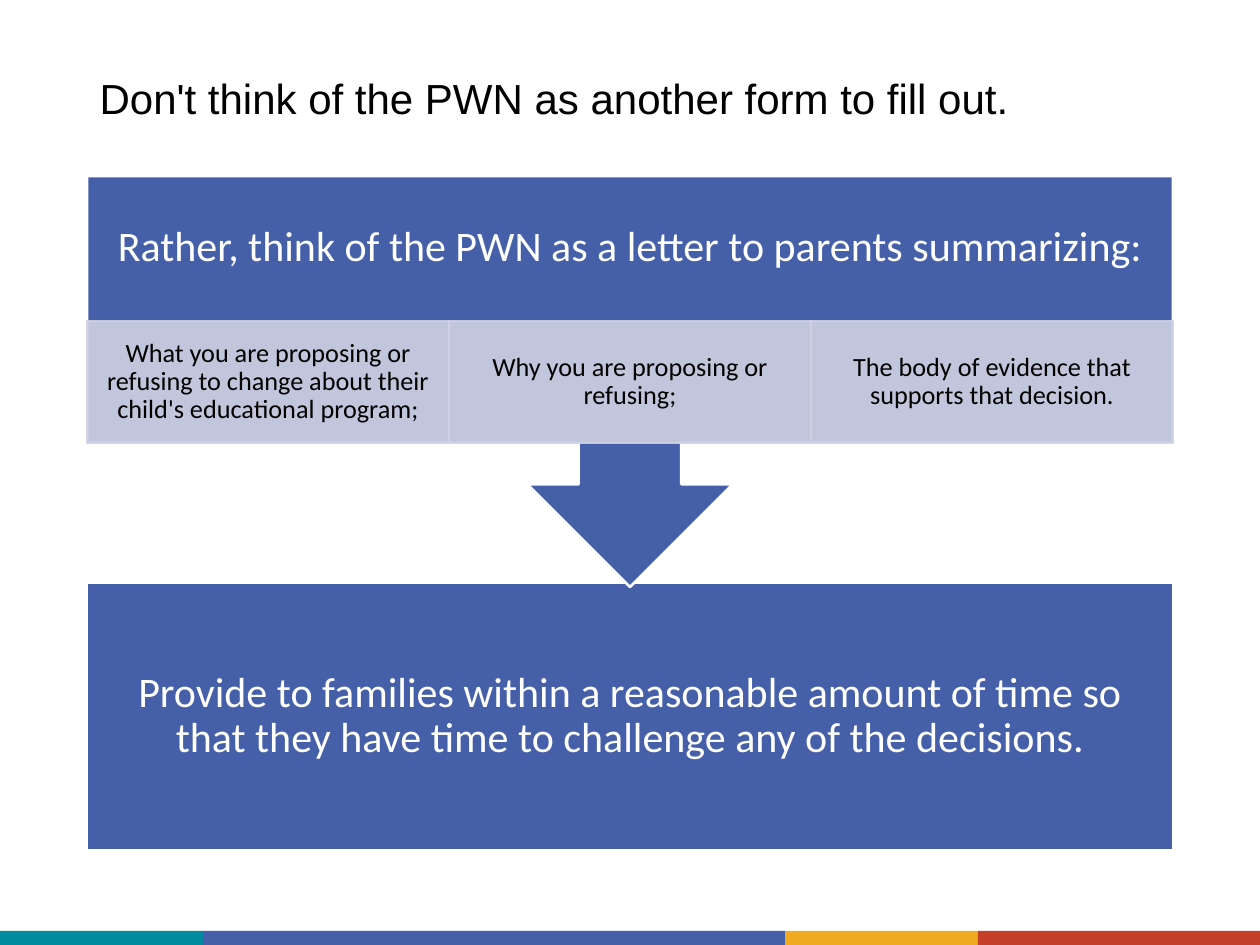
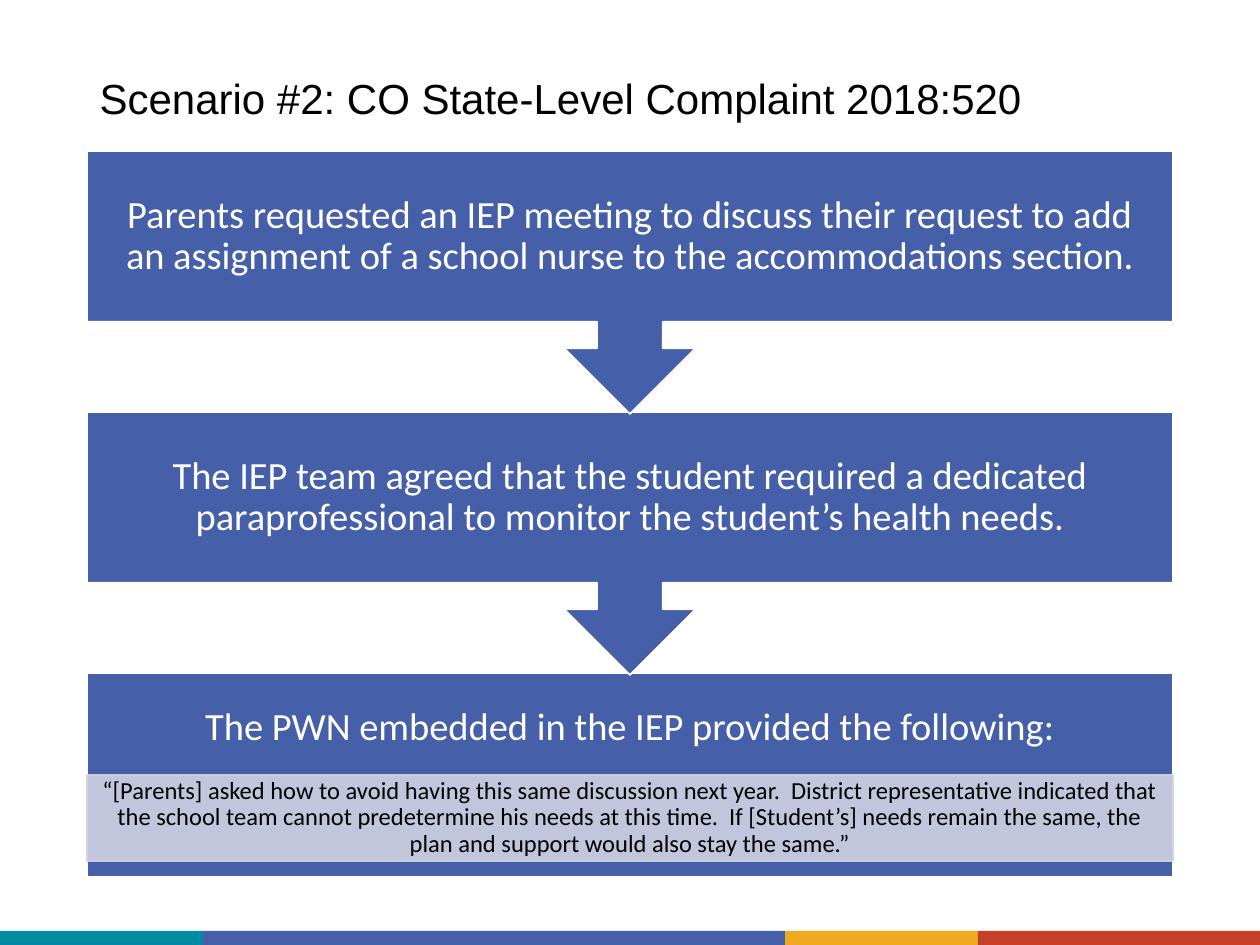
from lxml import etree
from pptx import Presentation
from pptx.dml.color import RGBColor
from pptx.enum.shapes import MSO_SHAPE
from pptx.enum.text import MSO_ANCHOR, MSO_AUTO_SIZE, PP_ALIGN
from pptx.oxml.ns import qn
from pptx.util import Emu, Pt

PX_PER_INCH = 126
PAGE_WIDTH, PAGE_HEIGHT = 1260, 945

BLACK = RGBColor(0x00, 0x00, 0x00)
WHITE = RGBColor(0xFF, 0xFF, 0xFF)
TEAL = RGBColor(0x00, 0x8C, 0xA0)
BLUE = RGBColor(0x45, 0x5F, 0xA9)
GOLD = RGBColor(0xEF, 0xAA, 0x1F)
RED = RGBColor(0xC6, 0x3F, 0x28)
LAVENDER = RGBColor(0xCF, 0xD2, 0xE2)

# Shared frame: content column and footer stripes
LEFT, WIDTH = 87, 1086
STRIPE_TOP, STRIPE_HEIGHT = 931, 14
STRIPES = [(TEAL, 203), (BLUE, 582), (GOLD, 193), (RED, 282)]


def px(length):
    return Emu(round(length * 914400 / PX_PER_INCH))


def set_all(target, values):
    for name, value in values.items():
        setattr(target, name, value)


def add_block(page, kind, left, top, width, height, fill):
    """Add a flat preset shape without outline or shadow."""
    block = page.shapes.add_shape(kind, px(left), px(top), px(width), px(height))
    block.shadow.inherit = False
    block.fill.solid()
    block.fill.fore_color.rgb = fill
    block.line.fill.background()
    return block


def set_outline(block, color, points):
    block.line.color.rgb = color
    block.line.width = Pt(points)


def make_translucent(block, percent):
    """Apply one opacity to the fill and the outline."""
    for color in block._element.spPr.iter(qn("a:srgbClr")):
        etree.SubElement(color, qn("a:alpha"), val=str(percent * 1000))


def write_text(box, text, font, align=PP_ALIGN.CENTER, **frame_format):
    frame = box.text_frame
    frame.text = text
    set_all(frame, {"word_wrap": True, "auto_size": MSO_AUTO_SIZE.NONE,
                    "vertical_anchor": MSO_ANCHOR.MIDDLE, **frame_format})
    para = frame.paragraphs[0]
    set_all(para, {"alignment": align, "line_spacing": 0.9})
    span_font = para.runs[0].font
    span_font.color.rgb = font.pop("color")
    set_all(span_font, font)


def margins(side, top, bottom):
    return {"margin_left": px(side), "margin_right": px(side),
            "margin_top": px(top), "margin_bottom": px(bottom)}


def add_step(page, kind, top, height, text, size, inset, outline, reserved=0):
    """Add a blue step; reserved is the depth kept free below its text."""
    step = add_block(page, kind, LEFT, top, WIDTH, height, BLUE)
    set_outline(step, WHITE, outline)
    write_text(step, text, {"name": "Calibri", "size": Pt(size), "color": WHITE},
               **margins(inset, inset, inset + reserved))


def add_details(page, top, height, texts, size):
    """Add a row of equal pale cells across the content column."""
    cell_width = WIDTH // len(texts)
    for column, text in enumerate(texts):
        cell = add_block(page, MSO_SHAPE.RECTANGLE, LEFT + column * cell_width,
                         top, cell_width, height, LAVENDER)
        set_outline(cell, LAVENDER, 1)
        make_translucent(cell, 90)
        write_text(cell, text, {"name": "Calibri", "size": Pt(size), "color": BLACK},
                   **margins(size, 2, 2))


def add_page(deck, title):
    """Add a page with its title and footer stripes."""
    page = deck.slides.add_slide(deck.slide_layouts[5])
    left = 0
    for color, width in STRIPES:
        add_block(page, MSO_SHAPE.RECTANGLE, left, STRIPE_TOP, width,
                  STRIPE_HEIGHT, color)
        left += width
    heading = page.shapes.title
    set_all(heading, {"left": px(LEFT), "top": px(50),
                      "width": px(WIDTH), "height": px(101)})
    write_text(heading, title, {"name": "Arial", "size": Pt(24), "color": BLACK},
               align=PP_ALIGN.LEFT)
    return page


def build_letter_page(deck):
    page = add_page(deck, "Don't think of the PWN as another form to fill out.")
    step_format = {"size": 24, "inset": 24, "outline": 1.5}
    # The lower step comes first so that the arrow tip lies over it
    add_step(page, MSO_SHAPE.RECTANGLE, 583, 267,
             "Provide to families within a reasonable amount of time so that "
             "they have time to challenge any of the decisions.", **step_format)
    add_step(page, MSO_SHAPE.DOWN_ARROW_CALLOUT, 176, 411,
             "Rather, think of the PWN as a letter to parents summarizing:",
             reserved=123, **step_format)
    add_details(page, 321, 122, [
        "What you are proposing or refusing to change about their child's "
        "educational program;",
        "Why you are proposing or refusing;",
        "The body of evidence that supports that decision."], 15)


def build_scenario_page(deck):
    page = add_page(deck, "Scenario #2: CO State-Level Complaint 2018:520")
    step_format = {"size": 22, "inset": 21, "outline": 1}
    first_top, pitch = 151, 261
    requests = [
        "Parents requested an IEP meeting to discuss their request to add an "
        "assignment of a school nurse to the accommodations section.",
        "The IEP team agreed that the student required a dedicated "
        "paraprofessional to monitor the student’s health needs."]
    # Outcome with the quoted notice
    add_step(page, MSO_SHAPE.RECTANGLE, first_top + 2 * pitch, 204,
             "The PWN embedded in the IEP provided the following:",
             reserved=93, **step_format)
    add_details(page, 775, 86, [
        "“[Parents] asked how to avoid having this same discussion next year.  "
        "District representative indicated that the school team cannot "
        "predetermine his needs at this time.  If [Student’s] needs remain the "
        "same, the plan and support would also stay the same.”"], 14)
    # Earlier steps, from the bottom up so that each tip lies over the next
    for row, text in reversed(list(enumerate(requests))):
        add_step(page, MSO_SHAPE.DOWN_ARROW_CALLOUT, first_top + row * pitch, 263,
                 text, **step_format)


def main():
    deck = Presentation()
    set_all(deck, {"slide_width": px(PAGE_WIDTH), "slide_height": px(PAGE_HEIGHT)})
    build_letter_page(deck)
    build_scenario_page(deck)
    deck.save("out.pptx")


if __name__ == "__main__":
    main()
